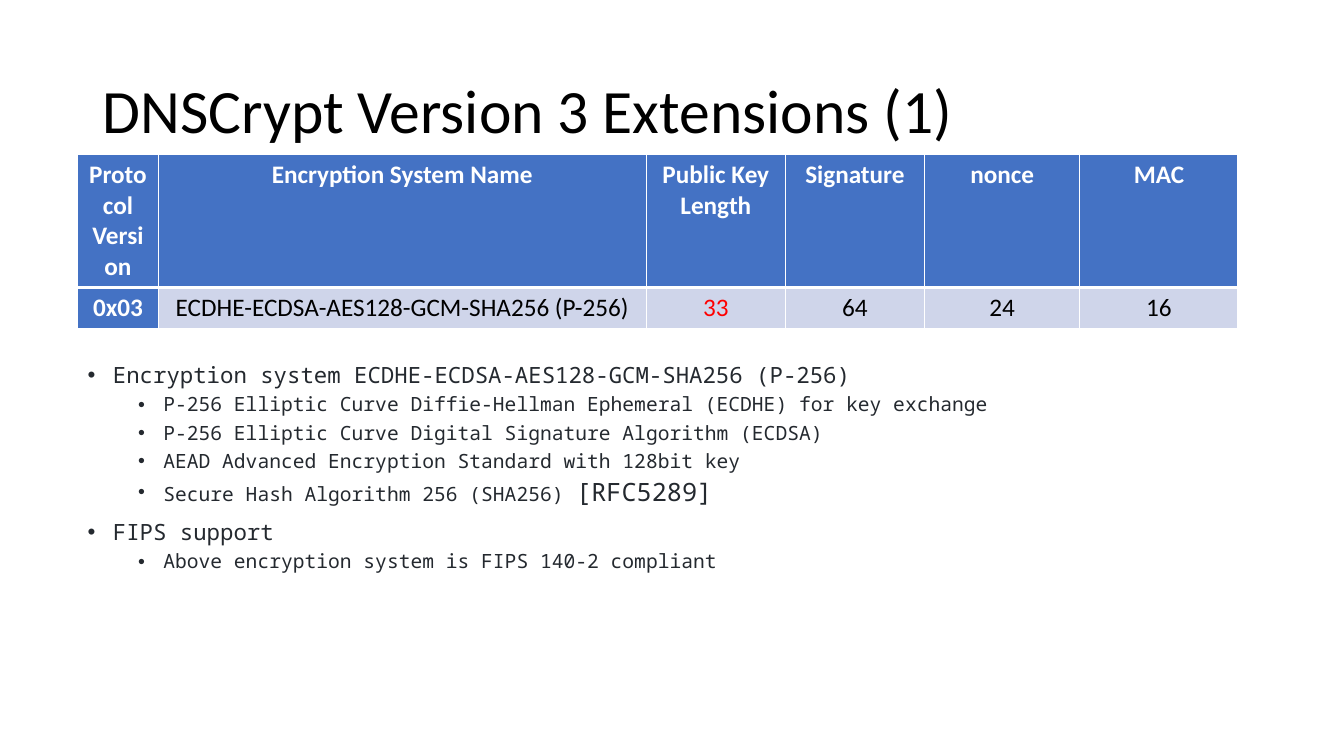
from lxml.etree import SubElement
from pptx import Presentation
from pptx.dml.color import RGBColor
from pptx.enum.text import MSO_ANCHOR, MSO_AUTO_SIZE, PP_ALIGN
from pptx.oxml.ns import qn
from pptx.util import Inches, Pt

# Content
TITLE = "DNSCrypt Version 3 Extensions (1)"
HEADERS = ["Protocol Version", "Encryption System Name", "Public Key Length",
           "Signature", "nonce", "MAC"]
VALUES = ["0x03", "ECDHE-ECDSA-AES128-GCM-SHA256 (P-256)", "33", "64", "24", "16"]
# Each bullet: level, then runs of (text, size)
BULLETS = [
    (0, [("Encryption system ECDHE-ECDSA-AES128-GCM-SHA256 (P-256)", 16)]),
    (1, [("P-256 Elliptic Curve Diffie-Hellman Ephemeral (ECDHE) for key exchange", 14)]),
    (1, [("P-256 Elliptic Curve Digital Signature Algorithm (ECDSA)", 14)]),
    (1, [("AEAD Advanced Encryption Standard with 128bit key", 14)]),
    (1, [("Secure Hash Algorithm 256 (SHA256) ", 14), ("[RFC5289]", 18)]),
    (0, [("FIPS support", 16)]),
    (1, [("Above encryption system is FIPS 140-2 compliant", 14)]),
]

# Layout and colours
TITLE_BOX = (0.92, 0.4, 11.5, 1.45)
TABLE_BOX = (0.77, 1.53, 11.5, 1.71)
BODY_BOX = (0.77, 3.56, 11.5, 3.11)
COLUMN_WIDTHS = [0.8, 4.84, 1.38, 1.38, 1.54, 1.57]
ROW_HEIGHTS = [1.3, 0.41]
BLUE, PALE, WHITE, BLACK, RED, INK = (
    "4472C4", "CFD5EA", "FFFFFF", "000000", "FF0000", "24292F")


def color(value):
    return RGBColor.from_string(value)


def format_font(font, fill, **values):
    for name, value in values.items():
        setattr(font, name, value)
    font.color.rgb = color(fill)


def place(shape, box):
    for name, value in zip(("left", "top", "width", "height"), box):
        setattr(shape, name, Inches(value))


def add_borders(cell, bottom):
    properties = cell._tc.get_or_add_tcPr()
    for tag, width in (("a:lnL", 1), ("a:lnR", 1), ("a:lnT", 1), ("a:lnB", bottom)):
        line = SubElement(properties, qn(tag), w=str(Pt(width)))
        fill = SubElement(line, qn("a:solidFill"))
        SubElement(fill, qn("a:srgbClr"), val=WHITE)


def add_bullet(paragraph, level):
    properties = paragraph._p.get_or_add_pPr()
    properties.set("marL", str(Inches(0.25 + 0.5 * level)))
    properties.set("indent", str(Inches(-0.25)))
    SubElement(properties, qn("a:buFont"), typeface="Arial")
    SubElement(properties, qn("a:buChar"), char="•")


presentation = Presentation()
presentation.slide_width = Inches(13.33)
presentation.slide_height = Inches(7.5)
slide = presentation.slides.add_slide(presentation.slide_layouts[1])

# Title
title = slide.shapes.title
place(title, TITLE_BOX)
title.text_frame.text = TITLE
title.text_frame.vertical_anchor = MSO_ANCHOR.MIDDLE
heading = title.text_frame.paragraphs[0]
heading.alignment = PP_ALIGN.LEFT
heading.line_spacing = 0.9
format_font(heading.runs[0].font, BLACK, name="Calibri", size=Pt(44))

# Table
table = slide.shapes.add_table(2, len(HEADERS), *map(Inches, TABLE_BOX)).table
table.first_col = True
for column, width in zip(table.columns, COLUMN_WIDTHS):
    column.width = Inches(width)
for row, height in zip(table.rows, ROW_HEIGHTS):
    row.height = Inches(height)
for row_index, texts in enumerate((HEADERS, VALUES)):
    for column_index, text in enumerate(texts):
        cell = table.cell(row_index, column_index)
        strong = row_index == 0 or column_index == 0
        add_borders(cell, 3 if row_index == 0 else 1)
        cell.fill.solid()
        cell.fill.fore_color.rgb = color(BLUE if strong else PALE)
        cell.text = text
        paragraph = cell.text_frame.paragraphs[0]
        paragraph.alignment = PP_ALIGN.CENTER
        text_color = WHITE if strong else RED if text == "33" else BLACK
        format_font(paragraph.runs[0].font, text_color,
                    name="Calibri", size=Pt(18), bold=strong)

# Bullet list
body = slide.placeholders[1]
place(body, BODY_BOX)
frame = body.text_frame
frame.auto_size = MSO_AUTO_SIZE.NONE
for index, (level, runs) in enumerate(BULLETS):
    paragraph = frame.add_paragraph() if index else frame.paragraphs[0]
    paragraph.level = level
    paragraph.line_spacing = 0.9
    paragraph.space_before = Pt(5 if level else 10)
    add_bullet(paragraph, level)
    for text, size in runs:
        run = paragraph.add_run()
        run.text = text
        format_font(run.font, INK, name="Noto Sans Mono", size=Pt(size))

presentation.save("out.pptx")
